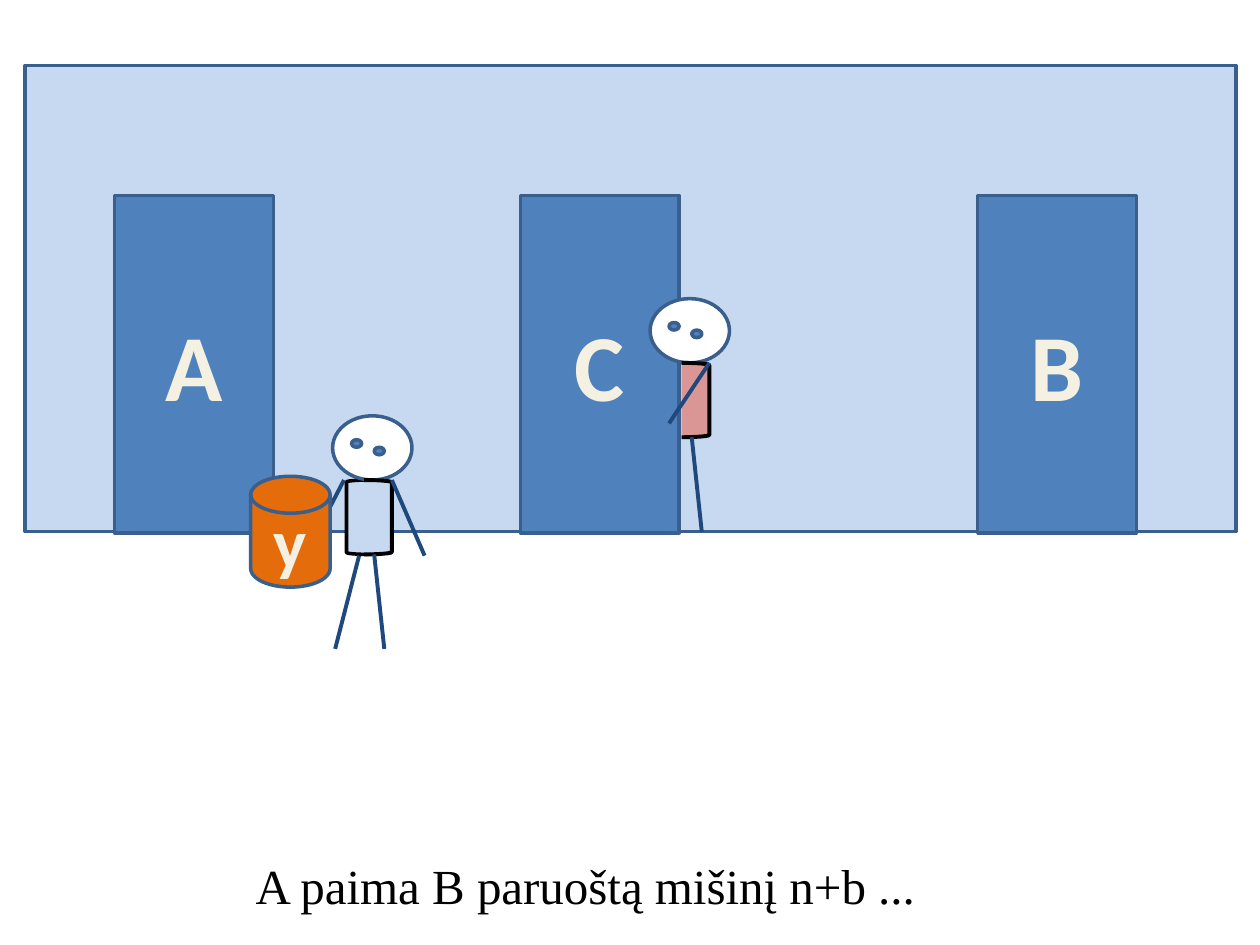
from lxml.etree import SubElement
from pptx import Presentation
from pptx.dml.color import RGBColor
from pptx.enum.shapes import MSO_CONNECTOR, MSO_SHAPE
from pptx.enum.text import MSO_ANCHOR, PP_ALIGN
from pptx.oxml.ns import qn
from pptx.util import Inches, Pt

HUES = {
    "wall": "C6D9F1", "door": "4F81BD", "edge": "3A5F8C", "sign": "F4F1E3",
    "limb": "1F497D", "drum": "E46C0A", "rose": "D99694",
    "white": "FFFFFF", "black": "000000",
}


def hue(name):
    """Return the named colour."""
    return RGBColor.from_string(HUES[name])


def write(shape, text, size, font="Calibri", color="sign", bold=True,
          align=PP_ALIGN.CENTER, anchor=MSO_ANCHOR.MIDDLE):
    """Put one formatted line of text in a shape."""
    frame = shape.text_frame
    frame.word_wrap = True
    frame.vertical_anchor = anchor
    line = frame.paragraphs[0]
    line.alignment = align
    run = line.add_run()
    run.text = text
    run.font.size = Pt(size)
    run.font.name = font
    run.font.bold = bold
    run.font.color.rgb = hue(color)


def draw(shapes, kind, box, fill, edge="edge", width=2):
    """Add a filled and outlined preset shape."""
    shape = shapes.add_shape(kind, *map(Inches, box))
    shape.shadow.inherit = False
    shape.fill.solid()
    shape.fill.fore_color.rgb = hue(fill)
    shape.line.color.rgb = hue(edge)
    shape.line.width = Pt(width)
    return shape


def limb(shapes, left, top, ends):
    """Add an arm or leg, with ends relative to the head's corner."""
    x1, y1, x2, y2 = ends
    line = shapes.add_connector(
        MSO_CONNECTOR.STRAIGHT, Inches(left + x1), Inches(top + y1),
        Inches(left + x2), Inches(top + y2))
    line.line.color.rgb = hue("limb")
    line.line.width = Pt(2.25)
    SubElement(line._element.spPr, qn("a:effectLst"))


def house(shapes, left, top, width, height):
    """Draw the wall with its three lettered doors."""
    draw(shapes, MSO_SHAPE.RECTANGLE, (left, top, width, height), "wall")
    for text, shift in (("A", 0.71), ("B", 7.56), ("C", 3.93)):
        box = (left + shift, top + 1.03, 1.26, 2.68)
        door = draw(shapes, MSO_SHAPE.RECTANGLE, box, "door")
        write(door, text, 54)


def person(shapes, left, top, shirt, limbs, whole=True):
    """Draw a stick person, whole or with only the right half of the body."""
    if whole:
        draw(shapes, MSO_SHAPE.LEFT_BRACKET,
             (left + 0.11, top + 0.51, 0.18, 0.59), shirt, "black")
    draw(shapes, MSO_SHAPE.OVAL, (left, top, 0.63, 0.51), "white")
    for x, y in ((0.15, 0.19), (0.33, 0.25)):
        draw(shapes, MSO_SHAPE.OVAL, (left + x, top + y, 0.08, 0.06), "door")
    draw(shapes, MSO_SHAPE.RIGHT_BRACKET,
         (left + 0.25, top + 0.51, 0.22, 0.59), shirt, "black", 2.25)
    for ends in ((0.33, 1.1, 0.41, 1.85), *limbs):
        limb(shapes, left, top, ends)


def drum(shapes, *box):
    """Draw the drum with its label."""
    can = draw(shapes, MSO_SHAPE.FLOWCHART_MAGNETIC_DISK, box, "drum")
    write(can, "y", 40)


def caption(shapes, *box):
    """Place the line of text under the scene."""
    label = shapes.add_textbox(*map(Inches, box))
    write(label, "A paima B paruoštą mišinį n+b ...", 28, "Times New Roman",
          "black", False, PP_ALIGN.LEFT, MSO_ANCHOR.TOP)


def main():
    """Build and save the slide."""
    deck = Presentation()
    deck.slide_width, deck.slide_height = Inches(10), Inches(7.5)
    shapes = deck.slides.add_slide(deck.slide_layouts[6]).shapes
    house(shapes, 0.2, 0.52, 9.61, 3.7)
    person(shapes, 5.16, 2.37, "rose", [(0.47, 0.51, 0.15, 0.99)], False)
    person(shapes.add_group_shape().shapes, 2.64, 3.3, "wall", [
        (0.47, 0.51, 0.73, 1.11),
        (0.21, 1.11, 0.02, 1.85),
        (0.09, 0.51, -0.22, 1.11),
    ])
    drum(shapes, 1.99, 3.78, 0.63, 0.88)
    caption(shapes, 1.93, 6.74, 7.79, 0.57)
    deck.save("out.pptx")


if __name__ == "__main__":
    main()
